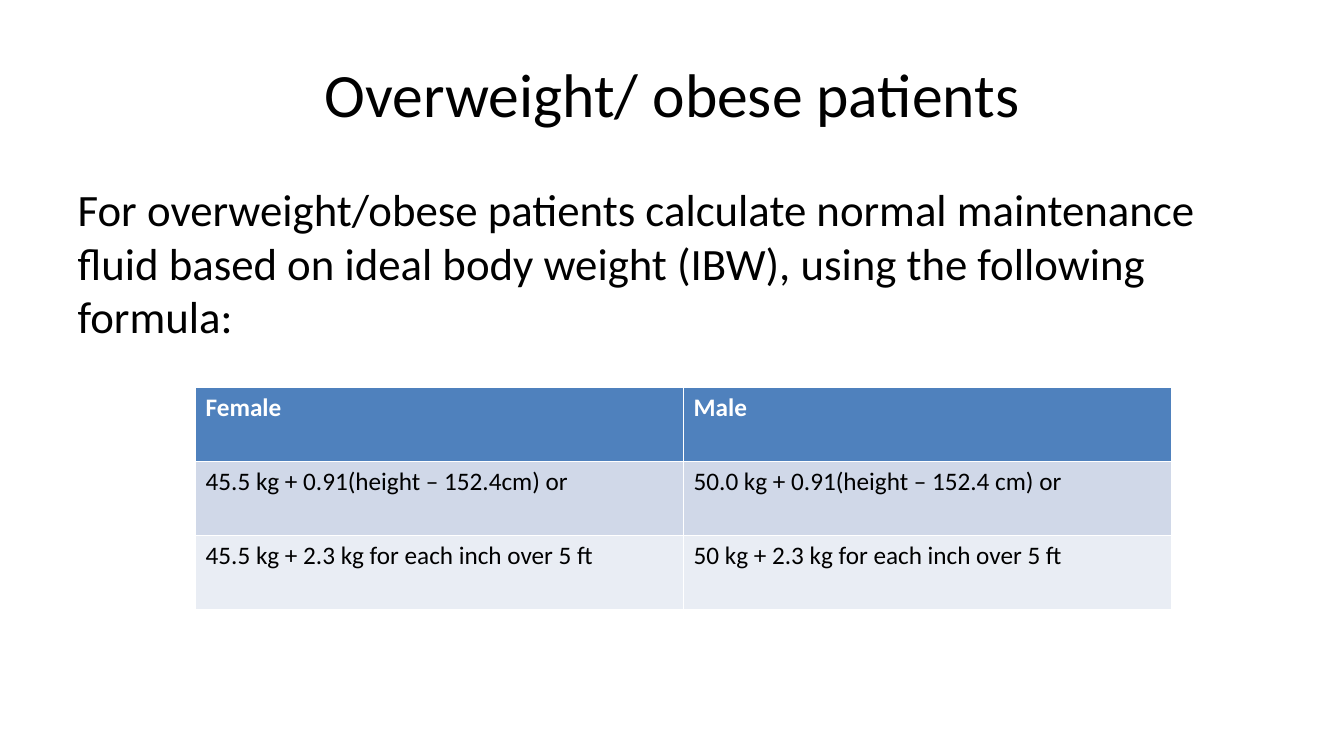
from lxml import etree
from pptx import Presentation
from pptx.dml.color import RGBColor
from pptx.enum.text import MSO_ANCHOR, PP_ALIGN
from pptx.oxml.ns import qn
from pptx.util import Inches, Pt

BLACK = RGBColor(0x00, 0x00, 0x00)
WHITE = RGBColor(0xFF, 0xFF, 0xFF)
HEADER_BLUE = RGBColor(0x4F, 0x81, 0xBD)
BAND_DARK = RGBColor(0xD0, 0xD8, 0xE8)
BAND_LIGHT = RGBColor(0xE9, 0xED, 0xF4)


def write_text(text_frame, text, size, color, bold=False):
    """Fill the frame with one formatted paragraph and return it."""
    paragraph = text_frame.paragraphs[0]
    run = paragraph.add_run()
    run.text = text
    run.font.color.rgb = color
    font_format = {"name": "Calibri", "size": Pt(size), "bold": bold}
    for name, value in font_format.items():
        setattr(run.font, name, value)
    return paragraph


def place(shape, left, top, width, height):
    """Move and size a placeholder, in inches."""
    position = {"left": left, "top": top, "width": width, "height": height}
    for name, value in position.items():
        setattr(shape, name, Inches(value))


presentation = Presentation()
presentation.slide_width = Inches(13.33)
presentation.slide_height = Inches(7.5)
slide = presentation.slides.add_slide(presentation.slide_layouts[1])

# Title
title = slide.shapes.title
place(title, 0.67, 0.3, 12, 1.25)
title.text_frame.vertical_anchor = MSO_ANCHOR.MIDDLE
paragraph = write_text(title.text_frame, "Overweight/ obese patients", 44, BLACK)
paragraph.alignment = PP_ALIGN.CENTER

# Introduction, without a bullet
body = slide.placeholders[1]
place(body, 0.67, 1.75, 12, 4.95)
paragraph = write_text(
    body.text_frame,
    "For overweight/obese patients calculate normal maintenance fluid "
    "based on ideal body weight (IBW), using the following formula:",
    32, BLACK)
properties = paragraph._p.get_or_add_pPr()
properties.set("marL", "0")
properties.set("indent", "0")
etree.SubElement(properties, qn("a:buNone"))

# Ideal body weight table: texts, fill, text colour, bold
rows = [
    (("Female", "Male"), HEADER_BLUE, WHITE, True),
    (("45.5 kg + 0.91(height – 152.4cm) or",
      "50.0 kg + 0.91(height – 152.4 cm) or"), BAND_DARK, BLACK, False),
    (("45.5 kg + 2.3 kg for each inch over 5 ft",
      "50 kg + 2.3 kg for each inch over 5 ft"), BAND_LIGHT, BLACK, False),
]
table = slide.shapes.add_table(
    len(rows), 2, Inches(1.94), Inches(3.84), Inches(9.68), Inches(2.21)).table
for row_index, (texts, fill, color, bold) in enumerate(rows):
    for column_index, text in enumerate(texts):
        cell = table.cell(row_index, column_index)
        cell.fill.solid()
        cell.fill.fore_color.rgb = fill
        write_text(cell.text_frame, text, 18, color, bold)

presentation.save("out.pptx")
